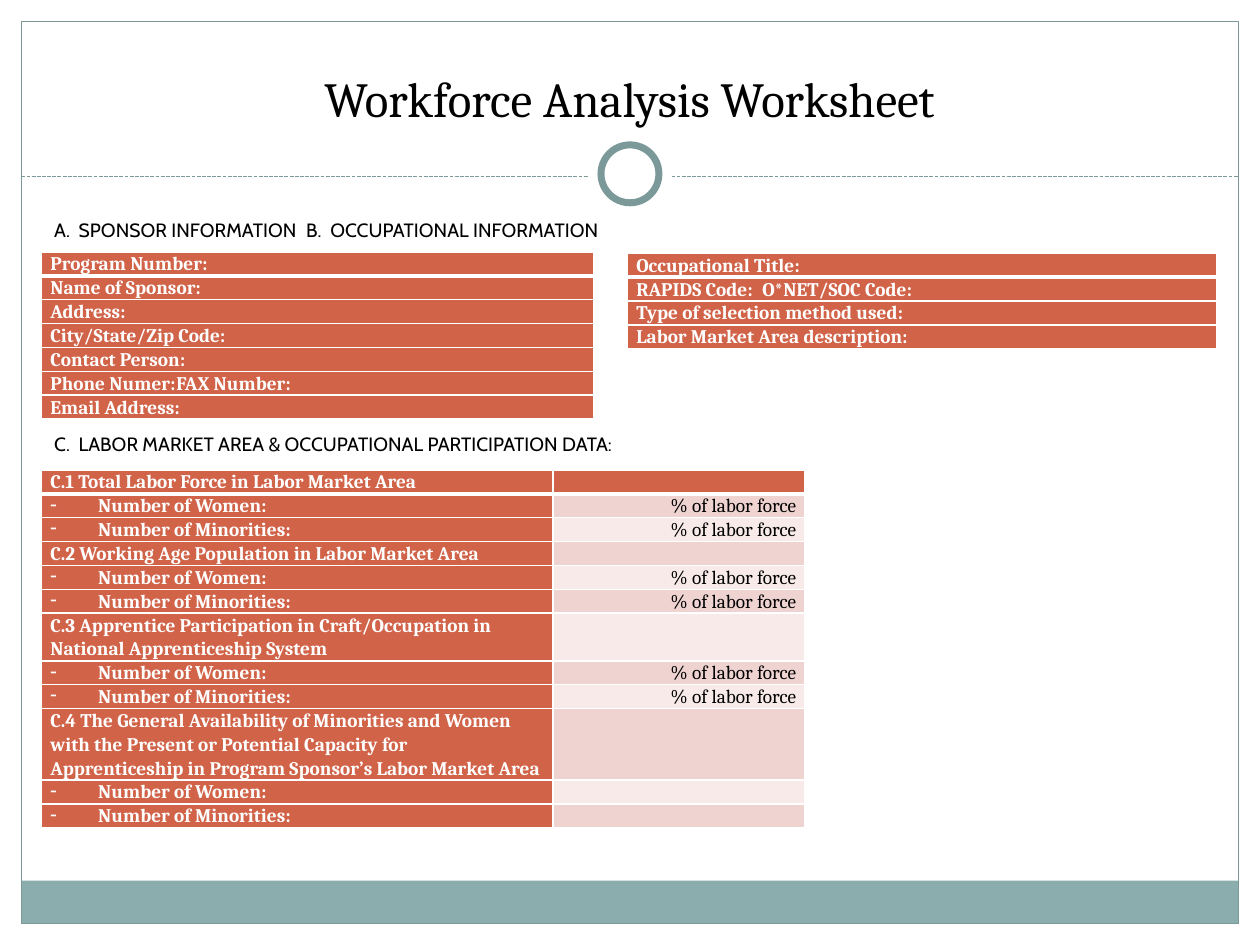
from dataclasses import dataclass

from pptx import Presentation
from pptx.dml.color import RGBColor
from pptx.enum.dml import MSO_LINE
from pptx.enum.shapes import MSO_CONNECTOR, MSO_SHAPE
from pptx.enum.text import MSO_ANCHOR, MSO_AUTO_SIZE, PP_ALIGN
from pptx.oxml.ns import qn
from pptx.util import Inches, Pt
from lxml.etree import SubElement


@dataclass(frozen=True)
class Theme:
    white: str = "FFFFFF"
    ink: str = "000000"
    frame: str = "7C999A"
    band: str = "8CADAE"
    accent: str = "D16349"
    tints: tuple = ("F7EAE9", "EED3D0")
    serif: str = "Cambria"
    sans: str = "Cabin"
    title_size: float = 28
    text_size: float = 11
    spacing: float = 1.07


THEME = Theme()

TITLE = "Workforce Analysis Worksheet"
HEADINGS = [
    ("A.  SPONSOR INFORMATION\tB.  OCCUPATIONAL INFORMATION", 0),
    ("C.  LABOR MARKET AREA & OCCUPATIONAL PARTICIPATION DATA:", 109.4),
]
SPONSOR = [
    "Program Number:",
    "Name of Sponsor:",
    "Address:",
    "City/State/Zip Code:",
    "Contact Person:",
    "Phone Numer:\tFAX Number:",
    "Email Address:",
]
OCCUPATION = [
    "Occupational Title:",
    "RAPIDS Code:\tO*NET/SOC Code:",
    "Type of selection method used:",
    "Labor Market Area description:",
]
SHARE = "% of labor force"
COUNTS = ["Number of Women:", "Number of Minorities:"]
SECTIONS = [
    ("C.1 Total Labor Force in Labor Market Area", SHARE),
    ("C.2 Working Age Population in Labor Market Area", SHARE),
    ("C.3 Apprentice Participation in Craft/Occupation in National Apprenticeship System", SHARE),
    ("C.4 The General Availability of Minorities and Women with the Present or Potential "
     "Capacity for Apprenticeship in Program Sponsor’s Labor Market Area", ""),
]

WIDTH, HEIGHT = 10, 7.5
EDGE = 0.17
RULE_Y = 1.4
LEFT = 0.33
ROW_HEIGHT = 0.18


def color(value):
    return RGBColor.from_string(value)


def write(paragraph, text, size=THEME.text_size, font=THEME.serif, ink=THEME.ink, bold=False,
          align=PP_ALIGN.LEFT, spacing=1.0, before=0, indent=0, bullet=None, tab=None):
    paragraph.alignment = align
    paragraph.line_spacing = spacing
    paragraph.space_before = Pt(before)
    properties = paragraph._p.get_or_add_pPr()
    properties.set("marL", str(Inches(indent)))
    properties.set("indent", str(-Inches(indent)))
    if bullet:
        SubElement(properties, qn("a:buChar"), char=bullet)
    else:
        SubElement(properties, qn("a:buNone"))
    if tab:
        stops = SubElement(properties, qn("a:tabLst"))
        SubElement(stops, qn("a:tab"), pos=str(Inches(tab)), algn="l")
    if not text:
        paragraph._p.get_or_add_endParaRPr().set("sz", str(size * 100))
        return
    run = paragraph.add_run()
    run.text = text
    run.font.size = Pt(size)
    run.font.name = font
    run.font.bold = bold
    run.font.color.rgb = color(ink)


def add_shape(slide, kind, left, top, width, height, fill=None, line=None, weight=0.75):
    shape = slide.shapes.add_shape(kind, *map(Inches, (left, top, width, height)))
    shape.shadow.inherit = False
    if fill:
        shape.fill.solid()
        shape.fill.fore_color.rgb = color(fill)
    else:
        shape.fill.background()
    if line:
        shape.line.color.rgb = color(line)
        shape.line.width = Pt(weight)
    else:
        shape.line.fill.background()


def add_disc(slide, diameter, **style):
    add_shape(slide, MSO_SHAPE.OVAL, (WIDTH - diameter) / 2, RULE_Y - 0.02 - diameter / 2,
              diameter, diameter, **style)


def add_frame(slide):
    inner_width = WIDTH - 2 * EDGE
    add_shape(slide, MSO_SHAPE.RECTANGLE, EDGE, 6.99, inner_width, 0.34, fill=THEME.band)
    add_shape(slide, MSO_SHAPE.RECTANGLE, EDGE, EDGE, inner_width, HEIGHT - 2 * EDGE,
              line=THEME.frame)
    rule = slide.shapes.add_connector(MSO_CONNECTOR.STRAIGHT, Inches(EDGE), Inches(RULE_Y),
                                      Inches(WIDTH - EDGE), Inches(RULE_Y))
    rule.line.color.rgb = color(THEME.frame)
    rule.line.width = Pt(0.75)
    rule.line.dash_style = MSO_LINE.SQUARE_DOT
    SubElement(rule._element.spPr, qn("a:effectLst"))
    add_disc(slide, 0.67, fill=THEME.white)
    add_disc(slide, 0.46, fill=THEME.white, line=THEME.frame, weight=4)


def place(shape, left, top, width, height, anchor):
    shape.left, shape.top, shape.width, shape.height = map(Inches, (left, top, width, height))
    frame = shape.text_frame
    frame.word_wrap = True
    frame.auto_size = MSO_AUTO_SIZE.NONE
    frame.vertical_anchor = anchor
    return frame


def set_borders(cell, row):
    properties = cell._tc.get_or_add_tcPr()
    weights = {"L": 1, "R": 1, "T": 3 if row == 1 else 1, "B": 3 if row == 0 else 1}
    for side, weight in weights.items():
        line = SubElement(properties, qn(f"a:ln{side}"), w=str(Pt(weight)))
        fill = SubElement(line, qn("a:solidFill"))
        SubElement(fill, qn("a:srgbClr"), val=THEME.white)


def add_table(slide, rows, left, top, widths, tab=None):
    table = slide.shapes.add_table(len(rows), len(widths), Inches(left), Inches(top),
                                   Inches(sum(widths)), Inches(ROW_HEIGHT * len(rows))).table
    table.horz_banding = False
    for column, width in zip(table.columns, widths):
        column.width = Inches(width)
    for row, texts in enumerate(rows):
        for column, text in enumerate(texts):
            cell = table.cell(row, column)
            cell.margin_left = cell.margin_right = Inches(0.07)
            cell.margin_top = cell.margin_bottom = 0
            set_borders(cell, row)
            strong = row == 0 or column == 0
            cell.fill.solid()
            cell.fill.fore_color.rgb = color(THEME.accent if strong else THEME.tints[row % 2])
            counted = text in COUNTS
            write(cell.text_frame.paragraphs[0], text, bold=strong, spacing=THEME.spacing,
                  ink=THEME.white if strong else THEME.ink,
                  align=PP_ALIGN.RIGHT if column else PP_ALIGN.LEFT,
                  indent=0.38 if counted else 0, bullet="-" if counted else None,
                  tab=tab if "\t" in text else None)


def main():
    presentation = Presentation()
    presentation.slide_width, presentation.slide_height = Inches(WIDTH), Inches(HEIGHT)
    slide = presentation.slides.add_slide(presentation.slide_layouts[1])
    title, body = slide.placeholders
    add_frame(slide)
    for placeholder in (title, body):
        slide.shapes._spTree.append(placeholder._element)

    frame = place(title, LEFT, 0.36, 9.33, 0.7, MSO_ANCHOR.BOTTOM)
    write(frame.paragraphs[0], TITLE, size=THEME.title_size, align=PP_ALIGN.CENTER)
    frame = place(body, LEFT, 1.68, 9.3, 5.14, MSO_ANCHOR.TOP)
    for index, (text, before) in enumerate(HEADINGS):
        paragraph = frame.add_paragraph() if index else frame.paragraphs[0]
        write(paragraph, text, font=THEME.sans, before=before, tab=5)

    participation = [row for heading, share in SECTIONS
                     for row in [(heading, ""), *((count, share) for count in COUNTS)]]
    add_table(slide, [(text,) for text in SPONSOR], LEFT, 2, [4.38], tab=2.13)
    add_table(slide, [(text,) for text in OCCUPATION], 4.98, 2.01, [4.68], tab=2.1)
    add_table(slide, participation, LEFT, 3.73, [4.06, 2])
    presentation.save("out.pptx")


if __name__ == "__main__":
    main()
